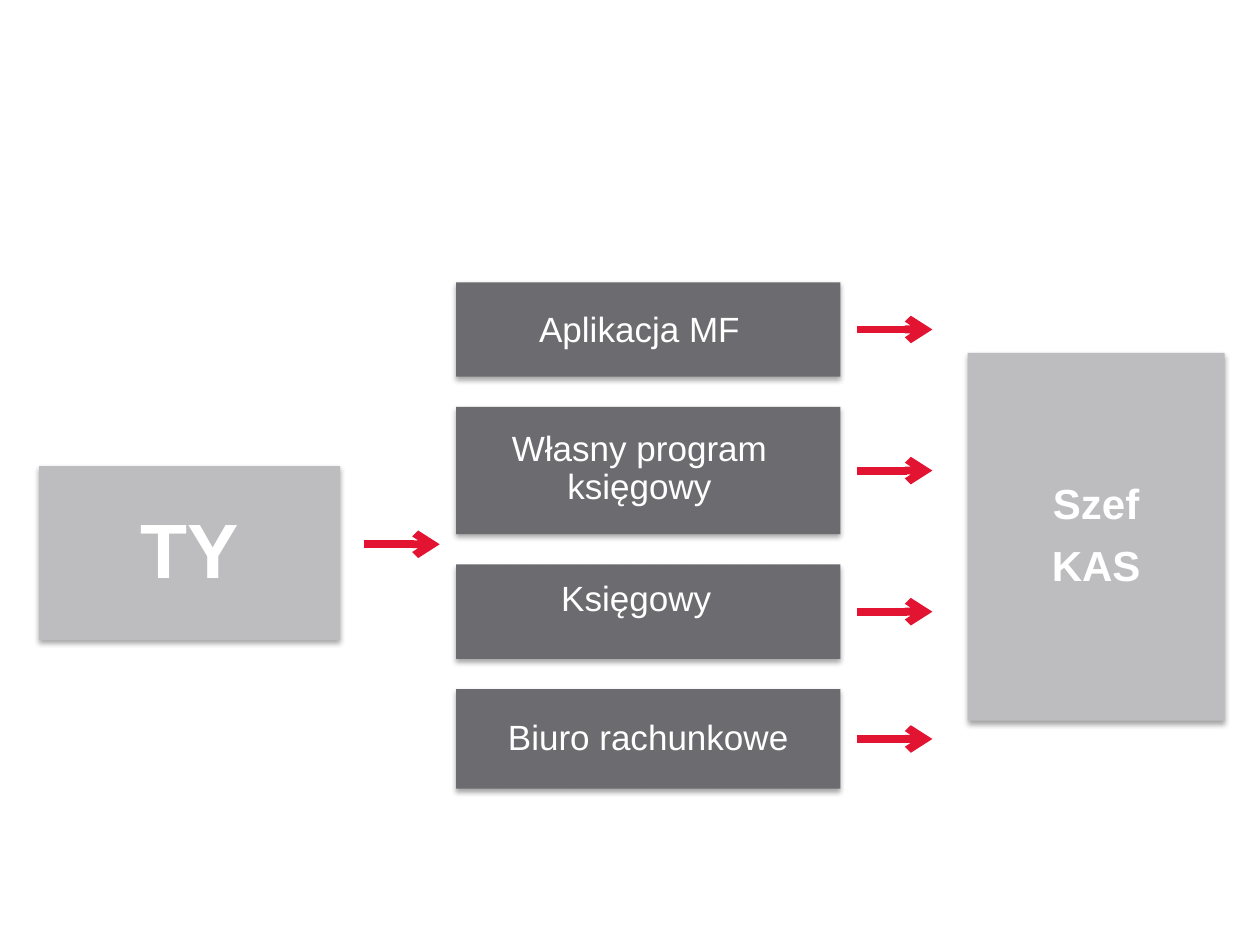
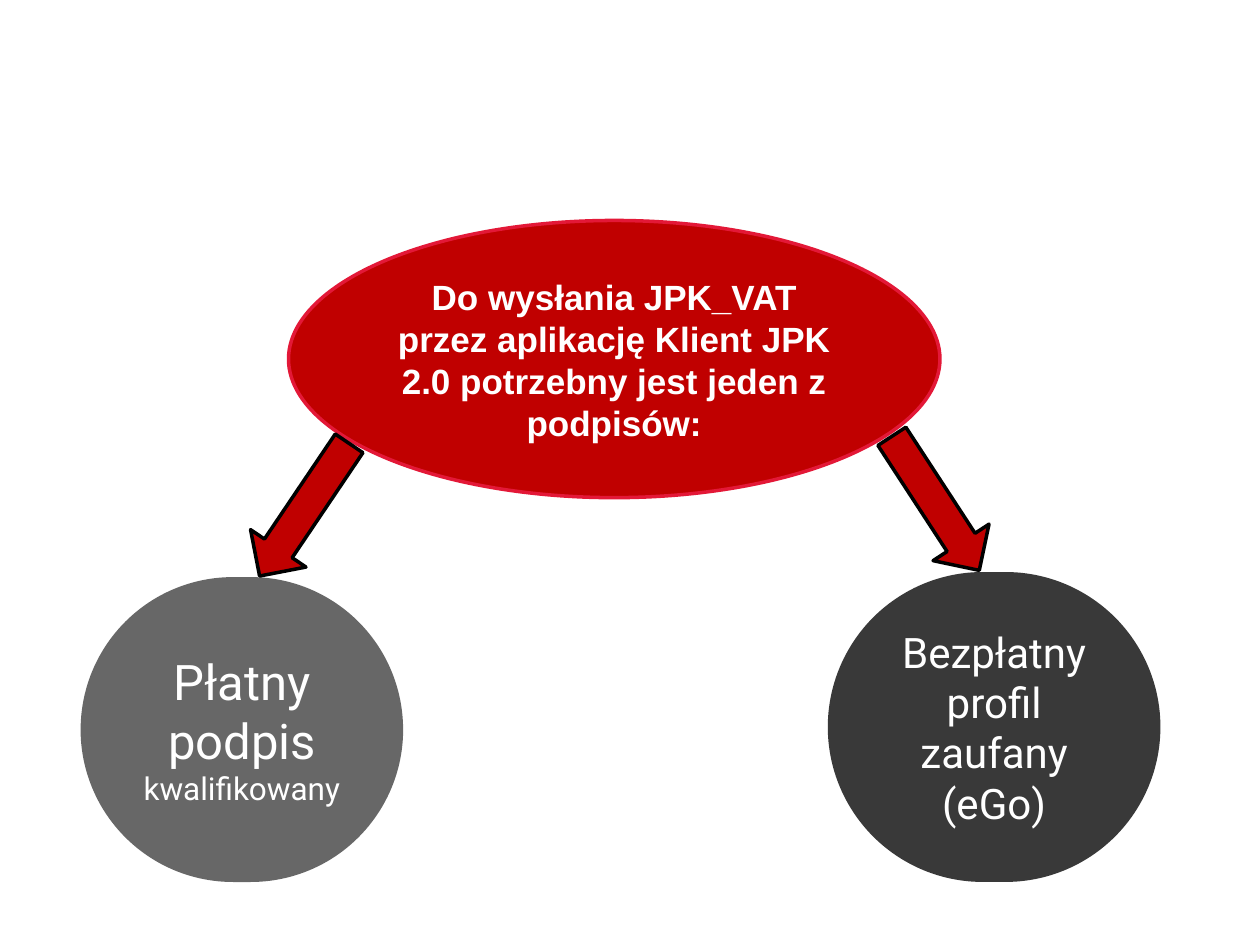
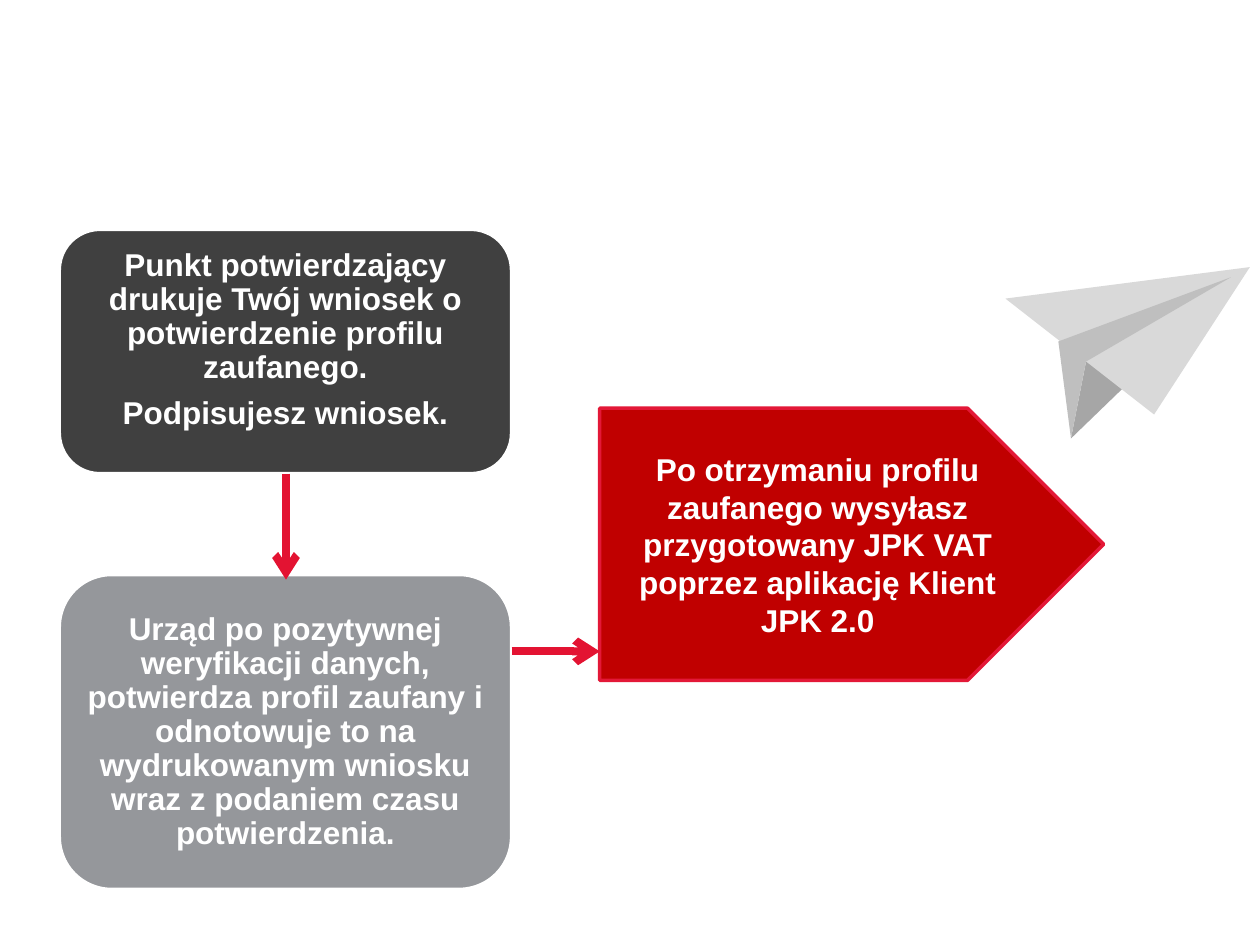
from dataclasses import dataclass

from lxml.etree import SubElement
from pptx import Presentation
from pptx.dml.color import RGBColor
from pptx.enum.shapes import MSO_CONNECTOR, MSO_SHAPE
from pptx.enum.text import MSO_ANCHOR, PP_ALIGN
from pptx.oxml.ns import qn
from pptx.util import Inches, Pt

COLUMNS, ROWS = 10, 7.5
UNIT = Inches(1)
COLORS = {
    "arrow": "E31332",
    "outline": "E31837",
    "red": "C00000",
    "white": "FFFFFF",
    "black": "000000",
    "party": "BDBDBF",
    "channel": "6C6C70",
    "paid": "595959",
    "free": "262626",
    "application": "404040",
    "office": "95979B",
    "wing": "D9D9D9",
    "fold": "BFBFBF",
    "keel": "A6A6A6",
}


@dataclass
class Box:
    left: float
    top: float
    width: float
    height: float

    def inner(self, left, top, width, height):
        return Box(self.left + left, self.top + top, width, height)

    def point(self, column, row):
        return round((self.left + column) * UNIT), round((self.top + row) * UNIT)

    def lengths(self):
        return [round(value * UNIT) for value in (self.left, self.top, self.width, self.height)]


def color(name):
    return RGBColor.from_string(COLORS[name])


def paint(shape, fill, outline=None):
    shape.shadow.inherit = False
    shape.fill.solid()
    shape.fill.fore_color.rgb = color(fill)
    if outline:
        shape.line.color.rgb = color(outline)
        shape.line.width = Pt(2)
    else:
        shape.line.fill.background()


def add_block(slide, kind, box, fill, outline=None):
    shape = slide.shapes.add_shape(kind, *box.lengths())
    paint(shape, fill, outline)
    return shape


def set_opacity(shape, percent):
    solid = shape._element.spPr.find(qn("a:solidFill"))
    SubElement(solid[0], qn("a:alpha"), val=str(percent * 1000))


def add_soft_shadow(shape):
    effects = shape._element.spPr.find(qn("a:effectLst"))
    shadow = SubElement(effects, qn("a:outerShdw"), blurRad=str(Pt(3.1)), dist=str(Pt(1.8)),
                        dir="5400000", algn="ctr", rotWithShape="0")
    tone = SubElement(shadow, qn("a:srgbClr"), val=COLORS["black"])
    SubElement(tone, qn("a:alpha"), val="35000")


def write(shape, lines, size, bold=False, font="Arial", compact=False, insets=None):
    frame = shape.text_frame
    frame.word_wrap = True
    frame.vertical_anchor = MSO_ANCHOR.MIDDLE
    if insets:
        (frame.margin_left, frame.margin_top,
         frame.margin_right, frame.margin_bottom) = [Inches(inset) for inset in insets]
    for index, line in enumerate(lines):
        paragraph = frame.add_paragraph() if index else frame.paragraphs[0]
        paragraph.text = line
        paragraph.alignment = PP_ALIGN.CENTER
        paragraph.font.name = font
        paragraph.font.size = Pt(size)
        paragraph.font.bold = bold
        paragraph.font.color.rgb = color("white")
        if compact:
            paragraph.line_spacing = 0.9
            if index < len(lines) - 1:
                paragraph.space_after = Pt(0.4 * size)
    return frame


def add_arrow(slide, box, start, end):
    connector = slide.shapes.add_connector(
        MSO_CONNECTOR.STRAIGHT, *box.point(*start), *box.point(*end))
    connector.line.color.rgb = color("arrow")
    connector.line.width = Pt(4.5)
    SubElement(connector.line._get_or_add_ln(), qn("a:tailEnd"), type="arrow")
    SubElement(connector._element.spPr, qn("a:effectLst"))


def add_card(slide, box, fill, lines, size, bold=False, insets=(0.01,) * 4):
    card = add_block(slide, MSO_SHAPE.RECTANGLE, box, fill)
    add_soft_shadow(card)
    write(card, lines, size, bold, compact=True, insets=insets)


def add_channels(slide, box):
    channels = [
        ("Aplikacja MF", 0.75, (0.01, 0.04, 0.15, 0.01)),
        ("Własny program księgowy", 1.01, (0.01, 0.01, 0.15, 0.03)),
        ("Księgowy", 0.75, (0.01, 0.01, 0.2, 0.2)),
        ("Biuro rachunkowe", 0.79, (0.01,) * 4),
    ]
    gap, top = 0.24, 0
    for label, height, insets in channels:
        add_card(slide, box.inner(0, top, box.width, height), "channel", [label], 20, insets=insets)
        middle = top + height / 2
        add_arrow(slide, box, (box.width + 0.13, middle), (box.width + 0.73, middle))
        top += height + gap


def build_submission(slide, page):
    add_card(slide, page.inner(0.31, 3.7, 2.39, 1.38), "party", ["TY"], 44, True)
    add_arrow(slide, page, (2.89, 4.32), (3.49, 4.32))
    add_channels(slide, page.inner(3.62, 2.24, 3.05, 4.01))
    add_card(slide, page.inner(7.68, 2.8, 2.04, 2.92), "party", ["Szef", "KAS"], 24, True)


def add_signature(slide, box, fill, lines, size):
    circle = add_block(slide, MSO_SHAPE.ROUNDED_RECTANGLE, box, fill)
    circle.adjustments[0] = 0.5
    set_opacity(circle, 91)
    return write(circle, lines, size, font="Roboto")


def build_signatures(slide, page):
    add_signature(slide, page.inner(6.57, 4.54, 2.64, 2.46), "free",
                  ["Bezpłatny", "profil zaufany (eGo)"], 24)
    paid = add_signature(slide, page.inner(0.64, 4.58, 2.56, 2.42), "paid",
                         ["Płatny", "podpis "], 28)
    qualifier = paid.paragraphs[-1].add_run()
    qualifier.text = "kwalifikowany"
    qualifier.font.size = Pt(18)

    question = add_block(slide, MSO_SHAPE.OVAL, page.inner(2.29, 1.75, 5.17, 2.2), "red", "outline")
    write(question, ["Do wysłania JPK_VAT przez aplikację Klient JPK 2.0 "
                     "potrzebny jest jeden z podpisów:"], 20, True)
    for left, top, rotation in ((1.78, 3.78, 124), (6.79, 3.73, 56.9)):
        pointer = add_block(slide, MSO_SHAPE.RIGHT_ARROW,
                            page.inner(left, top, 1.27, 0.53), "red", "black")
        pointer.rotation = rotation


def add_paper_plane(slide, box):
    tip, notch, bottom = (1.94, 0), (0.64, 0.75), (0.52, 1.36)
    facets = [
        ("keel", [(1.12, 0.78), bottom, notch]),
        ("wing", [tip, (0, 0.25), (1.18, 1.17)]),
        ("fold", [(1.79, 0.08), (0.42, 0.59), bottom, notch]),
    ]
    for fill, corners in facets:
        start, *others = [box.point(*corner) for corner in corners]
        builder = slide.shapes.build_freeform(*start)
        builder.add_line_segments(others, close=True)
        paint(builder.convert_to_shape(), fill)


def add_step(slide, box, fill, lines, bottom_inset):
    step = add_block(slide, MSO_SHAPE.ROUNDED_RECTANGLE, box, fill, "white")
    write(step, lines, 18, True, compact=True, insets=(0.04, 0.06, 0.04, bottom_inset))


def build_confirmation(slide, page):
    result = add_block(slide, MSO_SHAPE.PENTAGON, page.inner(4.76, 3.24, 4, 2.16), "red", "outline")
    write(result, ["Po otrzymaniu profilu zaufanego wysyłasz przygotowany JPK VAT "
                   "poprzez aplikację Klient JPK 2.0"], 18, True)
    add_paper_plane(slide, page.inner(7.98, 2.12, 1.94, 1.36))
    add_step(slide, page.inner(0.47, 1.82, 3.59, 1.94), "application",
             ["Punkt potwierdzający drukuje Twój wniosek o potwierdzenie profilu zaufanego.",
              "Podpisujesz wniosek."], 0.24)
    add_step(slide, page.inner(0.47, 4.56, 3.59, 2.5), "office",
             ["Urząd po pozytywnej weryfikacji danych, potwierdza profil zaufany i odnotowuje "
              "to na wydrukowanym wniosku wraz z podaniem czasu potwierdzenia."], 0.06)
    add_arrow(slide, page, (2.27, 3.76), (2.27, 4.6))
    add_arrow(slide, page, (4.06, 5.17), (4.76, 5.17))


def main():
    presentation = Presentation()
    presentation.slide_width = round(COLUMNS * UNIT)
    presentation.slide_height = round(ROWS * UNIT)
    page = Box(0, 0, COLUMNS, ROWS)
    for build in (build_submission, build_signatures, build_confirmation):
        build(presentation.slides.add_slide(presentation.slide_layouts[6]), page)
    presentation.save("out.pptx")


if __name__ == "__main__":
    main()
